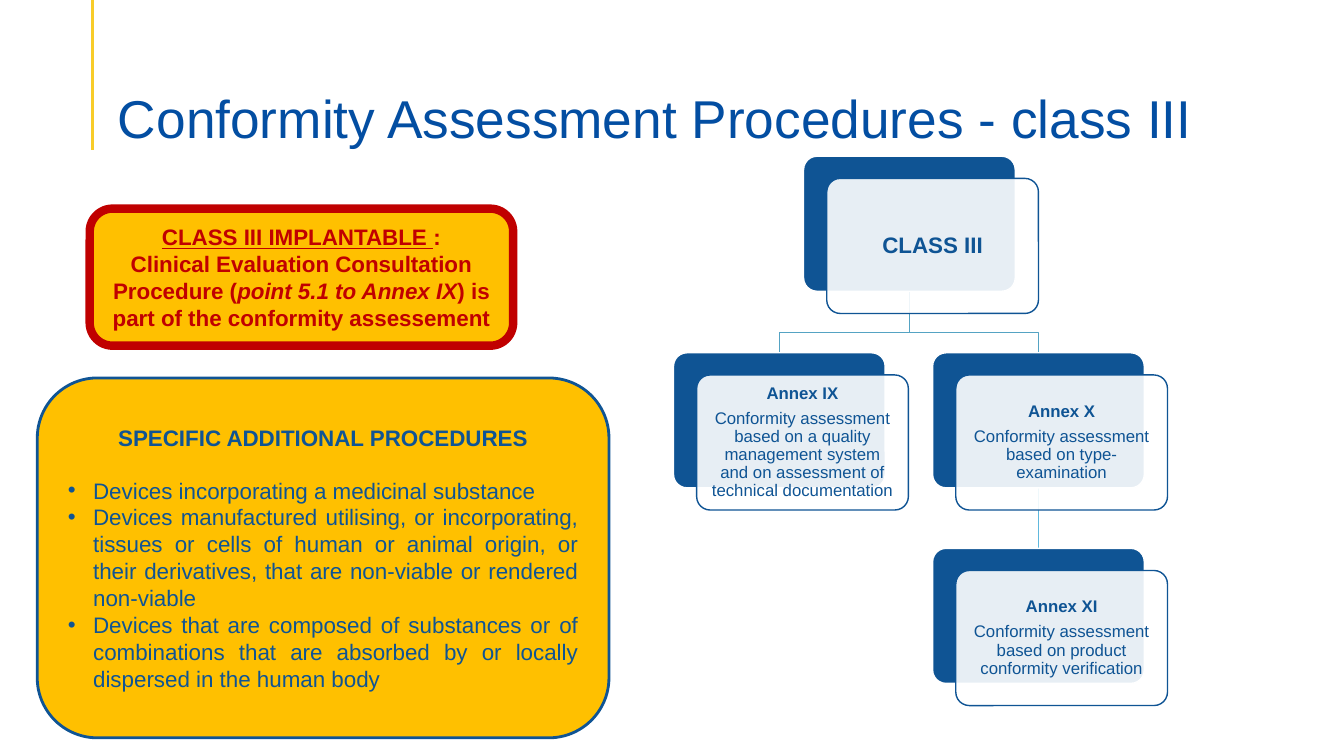
from lxml import etree
from pptx import Presentation
from pptx.dml.color import RGBColor
from pptx.enum.shapes import MSO_CONNECTOR, MSO_SHAPE
from pptx.enum.text import MSO_ANCHOR, MSO_AUTO_SIZE, PP_ALIGN
from pptx.oxml.ns import qn
from pptx.util import Inches, Pt

ROUND = MSO_SHAPE.ROUNDED_RECTANGLE
STRAIGHT = MSO_CONNECTOR.STRAIGHT
MIDDLE, BOTTOM = MSO_ANCHOR.MIDDLE, MSO_ANCHOR.BOTTOM
LEFT, CENTER, JUSTIFY = PP_ALIGN.LEFT, PP_ALIGN.CENTER, PP_ALIGN.JUSTIFY

COLORS = {
    "title": "034EA2", "navy": "0F5494", "white": "FFFFFF", "amber": "FFC000",
    "red": "C00000", "accent": "F8CC29", "branch": "55A3C3", "leaf": "60B8DD",
}
FONT = "Arial"
CARD_W, CARD_H = 2.1, 1.34
SHIFT = 0.23

# Left, top, heading, detail
CARDS = [
    (7.97, 1.55, "CLASS III", None),
    (6.68, 3.5, "Annex IX", "Conformity assessment based on a quality management "
     "system and on assessment of technical documentation"),
    (9.25, 3.5, "Annex X", "Conformity assessment based on type-examination"),
    (9.25, 5.44, "Annex XI",
     "Conformity assessment based on product conformity verification"),
]
DEVICES = [
    "Devices incorporating a medicinal substance",
    "Devices manufactured utilising, or incorporating, tissues or cells of human "
    "or animal origin, or their derivatives, that are non-viable or rendered "
    "non-viable",
    "Devices that are composed of substances or of combinations that are absorbed "
    "by or locally dispersed in the human body",
]


def color(name):
    return RGBColor.from_string(COLORS[name])


class Board:
    """Holds the slide and draws each kind of element on it."""

    def __init__(self, slide):
        self.slide = slide
        self.shapes = slide.shapes

    def frame(self, shape, pads, anchor=MIDDLE):
        """Set wrapping, anchor and (side, top, bottom) insets."""
        text = shape.text_frame
        text.word_wrap = True
        text.auto_size = MSO_AUTO_SIZE.NONE
        text.vertical_anchor = anchor
        side, top, low = map(Inches, pads)
        text.margin_left = text.margin_right = side
        text.margin_top, text.margin_bottom = top, low
        return text

    def style(self, para, size, tint, align=CENTER, bold=False):
        para.alignment = align
        for run in para.runs:
            font = run.font
            font.name, font.size, font.bold = FONT, Pt(size), bold
            font.color.rgb = color(tint)

    def title(self, words):
        shape = self.shapes.title
        shape.left, shape.top = Inches(1.07), Inches(0.63)
        shape.width, shape.height = Inches(11.22), Inches(0.86)
        text = self.frame(shape, (0.1, 0.05, 0), BOTTOM)
        text.text = words
        para = text.paragraphs[0]
        para.line_spacing = 0.9
        self.style(para, 38, "title", LEFT)

    def line(self, start, end, tint, width):
        ends = [Inches(v) for v in (*start, *end)]
        link = self.shapes.add_connector(STRAIGHT, *ends)
        link.line.color.rgb = color(tint)
        link.line.width = Pt(width)
        etree.SubElement(link._element.spPr, qn("a:effectLst"))

    def elbow(self, points):
        first, *rest = [(Inches(x), Inches(y)) for x, y in points]
        path = self.shapes.build_freeform(*first)
        path.add_line_segments(rest, close=False)
        shape = path.convert_to_shape()
        shape.shadow.inherit = False
        shape.fill.background()
        shape.line.color.rgb = color("branch")
        shape.line.width = Pt(1)

    def box(self, left, top, width, height, fill, edge, weight, round_by=0.1667):
        shape = self.shapes.add_shape(
            ROUND, Inches(left), Inches(top), Inches(width), Inches(height))
        shape.adjustments[0] = round_by
        shape.shadow.inherit = False
        shape.fill.solid()
        shape.fill.fore_color.rgb = color(fill)
        shape.line.color.rgb = color(edge)
        shape.line.width = Pt(weight)
        return shape

    def card(self, left, top, head, detail):
        """Draw a solid box with a translucent label box offset over it."""
        self.box(left, top, CARD_W, CARD_H, "navy", "white", 1, 0.1)
        label = self.box(left + SHIFT, top + SHIFT - 0.01, CARD_W, CARD_H,
                         "white", "navy", 1, 0.1)
        tone = label._element.spPr.find(qn("a:solidFill"))[0]
        etree.SubElement(tone, qn("a:alpha"), val="90000")
        text = self.frame(label, (0.08, 0.08, 0.08))
        text.text = f"{head}\n{detail}" if detail else head
        for i, para in enumerate(text.paragraphs):
            para.line_spacing = 0.9
            para.space_after = Pt(5)
            self.style(para, 12 if detail else 16, "navy", bold=i == 0)

    def notice(self):
        shape = self.box(0.89, 2.07, 4.2, 1.36, "amber", "red", 6)
        text = self.frame(shape, (0.13, 0.07, 0.07))
        head, body = text.paragraphs[0], text.add_paragraph()
        for para, parts in (
            (head, ["CLASS III IMPLANTABLE ", ":"]),
            (body, ["Clinical Evaluation Consultation Procedure (",
                    "point 5.1 to Annex IX",
                    ") is part of the conformity assessement"]),
        ):
            for part in parts:
                para.add_run().text = part
            self.style(para, 16, "red", bold=True)
        head.runs[0].font.underline = True
        body.runs[1].font.italic = True

    def extras(self, head, items):
        shape = self.box(0.37, 3.75, 5.67, 3.57, "amber", "navy", 2)
        text = self.frame(shape, (0.13, 0.07, 0.07))
        text.text = "\n".join([head, *items])
        first, *rest = text.paragraphs
        first.space_after = Pt(18.4)
        self.style(first, 16, "navy", bold=True)
        for para in rest:
            props = para._p.get_or_add_pPr()
            props.set("marL", str(Inches(0.25)))
            props.set("indent", str(-Inches(0.25)))
            etree.SubElement(props, qn("a:buFont"), typeface=FONT)
            etree.SubElement(props, qn("a:buChar"), char="•")
            self.style(para, 16, "navy", JUSTIFY)


def main():
    deck = Presentation()
    deck.slide_width, deck.slide_height = Inches(13.33), Inches(7.5)
    board = Board(deck.slides.add_slide(deck.slide_layouts[5]))
    board.line((0.92, 0), (0.92, 1.49), "accent", 2.25)
    board.title("Conformity Assessment Procedures - class III")
    board.line((10.3, 4.83), (10.3, 5.44), "leaf", 1)
    for end in (10.3, 7.73):
        board.elbow([(9.02, 2.88), (9.02, 3.3), (end, 3.3), (end, 3.5)])
    for card in CARDS:
        board.card(*card)
    board.notice()
    board.extras("SPECIFIC ADDITIONAL PROCEDURES", DEVICES)
    deck.save("out.pptx")


if __name__ == "__main__":
    main()
